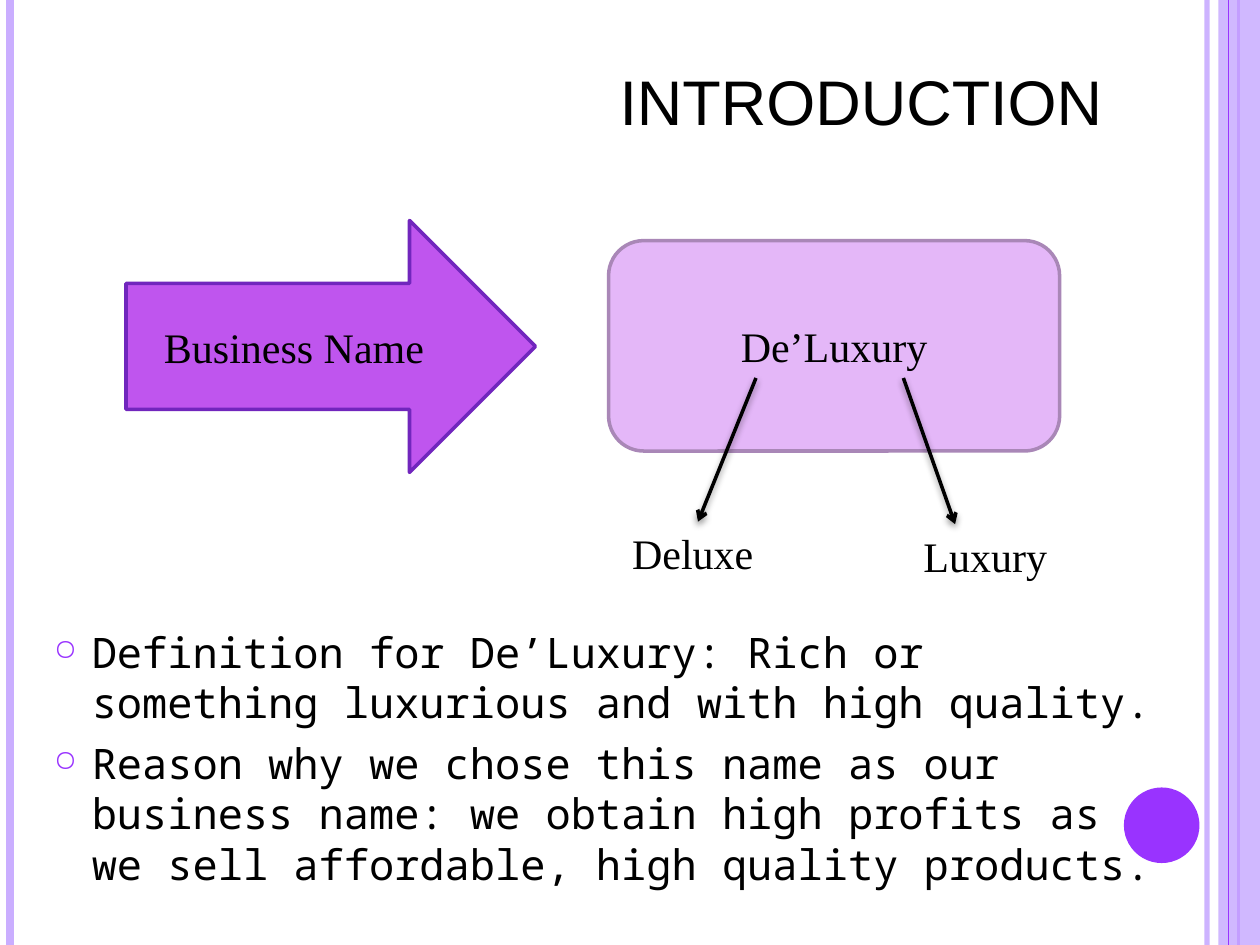
from lxml.etree import SubElement
from pptx import Presentation
from pptx.dml.color import RGBColor
from pptx.enum.shapes import MSO_CONNECTOR, MSO_SHAPE
from pptx.enum.text import MSO_ANCHOR, PP_ALIGN
from pptx.oxml.ns import qn
from pptx.util import Inches, Pt

BLACK = RGBColor(0x00, 0x00, 0x00)
LILAC = RGBColor(0xCA, 0xAE, 0xFF)
VIOLET = RGBColor(0x99, 0x33, 0xFF)
ORCHID = RGBColor(0xBF, 0x55, 0xEE)
INDIGO = RGBColor(0x71, 0x26, 0xBD)
PALE_ORCHID = RGBColor(0xE4, 0xB7, 0xF8)
MAUVE = RGBColor(0xA9, 0x87, 0xB7)

TITLE_FONT = "Arial"
BODY_FONT = "Noto Sans Mono"
LABEL_FONT = "Times New Roman"
TITLE_SIZE = 36
TEXT_SIZE = 24
SLIDE_WIDTH, SLIDE_HEIGHT = 10, 7.5

BULLETS = [
    "Definition for De’Luxury: Rich or something luxurious and with high quality.",
    "Reason why we chose this name as our business name: we obtain high profits "
    "as we sell affordable, high quality products.",
]


def add_xml(parent, tag, **attributes):
    return SubElement(parent, qn(tag), attributes)


def set_opacity(properties, percent):
    """Make the first solid colour below the given XML element partly transparent."""
    color = properties.find(".//" + qn("a:srgbClr"))
    add_xml(color, "a:alpha", val=str(percent * 1000))


class SlideBuilder:
    def __init__(self, slide):
        self.shapes = slide.shapes

    def add_span(self, para, text, font=LABEL_FONT, size=TEXT_SIZE, align=PP_ALIGN.CENTER):
        para.alignment = align
        span = para.add_run()
        span.text = text
        span.font.name = font
        span.font.size = Pt(size)
        span.font.color.rgb = BLACK

    def line(self, start, end, color, width, opacity=None):
        points = [Inches(value) for value in (*start, *end)]
        connector = self.shapes.add_connector(MSO_CONNECTOR.STRAIGHT, *points)
        connector.line.color.rgb = color
        connector.line.width = Pt(width)
        properties = connector._element.spPr
        if opacity:
            set_opacity(properties, opacity)
        return properties, add_xml(properties, "a:effectLst")

    def rule(self, x, color, width, opacity=None):
        """Draw a vertical stripe over the full slide height."""
        self.line((x, 0), (x, SLIDE_HEIGHT), color, width, opacity)

    def arrow(self, start, end):
        """Draw a black arrow with a soft shadow below it."""
        properties, effects = self.line(start, end, BLACK, 2)
        add_xml(properties.find(qn("a:ln")), "a:tailEnd", type="arrow")
        shadow = add_xml(effects, "a:outerShdw", blurRad=str(Pt(4)), dist=str(Pt(2)),
                         dir="5400000", rotWithShape="0")
        color = add_xml(shadow, "a:srgbClr", val=str(BLACK))
        add_xml(color, "a:alpha", val="40000")

    def shape(self, kind, frame, fill, outline=None, text=None, opacity=None):
        shape = self.shapes.add_shape(kind, *map(Inches, frame))
        shape.shadow.inherit = False
        shape.fill.solid()
        shape.fill.fore_color.rgb = fill
        if opacity:
            set_opacity(shape._element.spPr, opacity)
        if outline is None:
            shape.line.fill.background()
        else:
            shape.line.color.rgb = outline
            shape.line.width = Pt(2)
        if text:
            shape.text_frame.vertical_anchor = MSO_ANCHOR.MIDDLE
            self.add_span(shape.text_frame.paragraphs[0], text)

    def text_box(self, frame, wrap=True):
        box = self.shapes.add_textbox(*map(Inches, frame))
        box.text_frame.word_wrap = wrap
        return box.text_frame

    def title(self, frame, text):
        text_frame = self.text_box(frame)
        text_frame.vertical_anchor = MSO_ANCHOR.MIDDLE
        text_frame.margin_right = Inches(0.25)
        self.add_span(text_frame.paragraphs[0], text, TITLE_FONT, TITLE_SIZE, PP_ALIGN.RIGHT)

    def label(self, frame, text, wrap=True, align=PP_ALIGN.CENTER):
        self.add_span(self.text_box(frame, wrap).paragraphs[0], text, align=align)

    def bullets(self, frame, items):
        text_frame = self.text_box(frame)
        for index, item in enumerate(items):
            para = text_frame.add_paragraph() if index else text_frame.paragraphs[0]
            para.space_before = Pt(6)
            self.add_span(para, item, BODY_FONT, align=PP_ALIGN.LEFT)
            properties = para._p.get_or_add_pPr()
            properties.set("marL", str(Inches(0.3)))
            properties.set("indent", str(Inches(-0.3)))
            color = add_xml(properties, "a:buClr")
            add_xml(color, "a:srgbClr", val=str(VIOLET))
            add_xml(properties, "a:buSzPct", val="70000")
            add_xml(properties, "a:buChar", char="○")


def main():
    deck = Presentation()
    deck.slide_width = Inches(SLIDE_WIDTH)
    deck.slide_height = Inches(SLIDE_HEIGHT)
    page = SlideBuilder(deck.slides.add_slide(deck.slide_layouts[6]))

    page.rule(9.58, LILAC, 3, opacity=93)
    page.rule(0.08, LILAC, 4.5)
    page.rule(9.83, VIOLET, 1.5)
    page.shape(MSO_SHAPE.RECTANGLE, (9.67, 0, 0.33, SLIDE_HEIGHT), LILAC, opacity=87)
    page.rule(9.75, VIOLET, 0.75)
    page.shape(MSO_SHAPE.OVAL, (8.92, 6.25, 0.6, 0.6), VIOLET)

    page.title((0.83, 0.17, 8.17, 1.25), "INTRODUCTION")
    page.bullets((0.33, 4.92, 8.92, 2.5), BULLETS)

    page.shape(MSO_SHAPE.RIGHT_ARROW, (1, 1.75, 3.25, 2), ORCHID, INDIGO, "Business Name ")
    page.shape(MSO_SHAPE.ROUNDED_RECTANGLE, (4.83, 1.91, 3.58, 1.67),
               PALE_ORCHID, MAUVE, "De’Luxury")
    page.arrow((6, 3), (5.54, 4.14))
    page.arrow((7.17, 3), (7.58, 4.16))
    page.label((4.74, 4.14, 1.6, 0.5), "Deluxe ")
    page.label((7.23, 4.16, 1.28, 0.5), "Luxury", wrap=False, align=PP_ALIGN.LEFT)

    deck.save("out.pptx")


if __name__ == "__main__":
    main()
